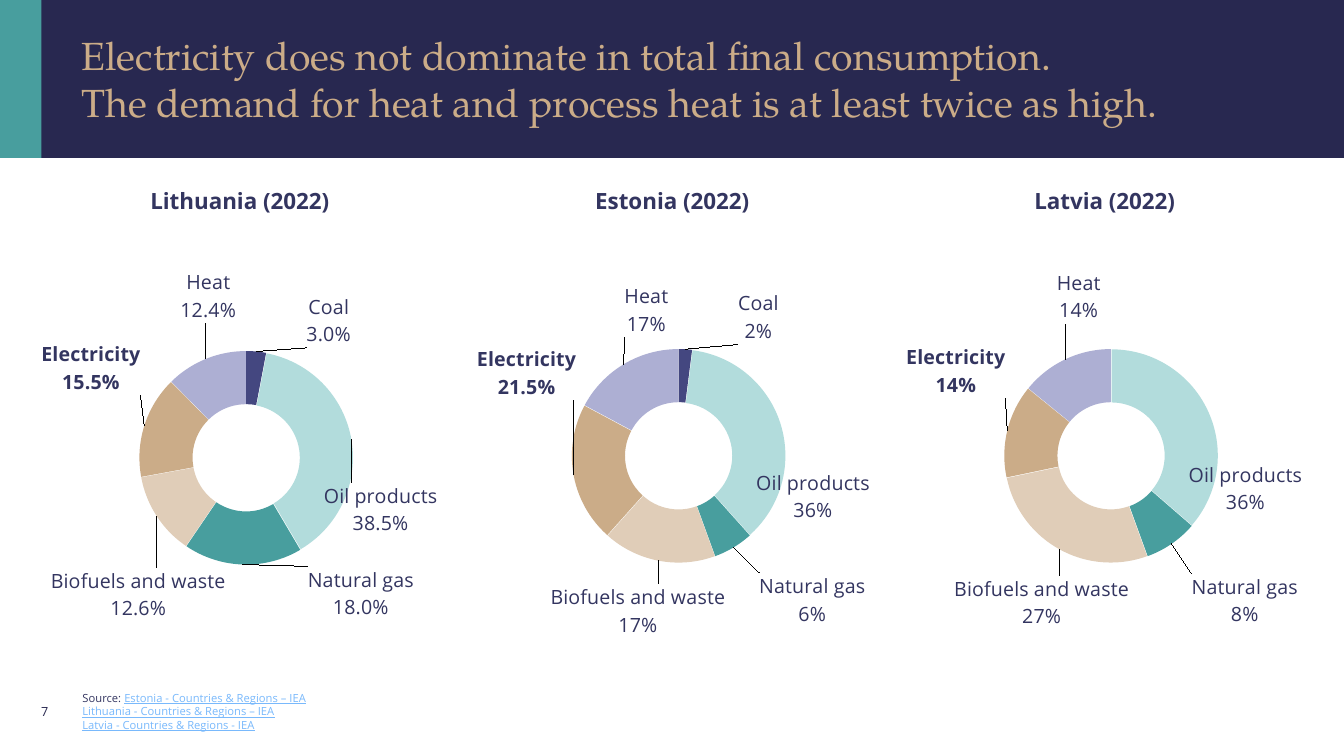
from dataclasses import dataclass
from math import cos, pi, sin

from pptx import Presentation
from pptx import util as u
from pptx.chart.data import CategoryChartData
from pptx.dml.color import RGBColor
from pptx.enum import chart as charts, shapes, text
from pptx.oxml import parse_xml
from pptx.oxml.ns import nsdecls, qn

SANS, SERIF = "Open Sans", "TeX Gyre Pagella"
NAVY, INK, TEAL, GOLD, LINK = "282850", "333560", "489E9E", "CBAC88", "79B9FC"
WIDE, HIGH, BAND = 960, 540, 113
RING_W, RING_H = 283.7, 300.2
PLOT_X, PLOT_Y, PLOT_W, PLOT_H = 0.247, 0.135, 0.538, 0.729
RADIUS = PLOT_W * RING_W / 2
FUELS = {
    "Coal": "444780",
    "Oil products": "B2DCDC",
    "Natural gas": TEAL,
    "Biofuels and waste": "E0CDB8",
    "Electricity": GOLD,
    "Heat": "ADAFD3",
}
BOLD = "Electricity"


@dataclass
class Ring:
    """One country's doughnut; spots are label centres from the ring centre."""
    name: str
    left: float
    top: float
    vals: list[float]
    spots: list[tuple[float, float]]
    form: str = "0%"
    fixed: str = ""


RINGS = [
    Ring("Lithuania (2022)", 29.5, 177.1, [3, 38.5, 18, 12.6, 15.5, 12.4],
         [(59, -98), (96, 37), (82, 97), (-77, 97.5), (-111, -64), (-27, -115.5)],
         form="0.0%"),
    Ring("Estonia (2022)", 338.4, 175.7, [2, 36, 6, 17, 21, 17],
         [(57, -99), (96, 29), (95.5, 103), (-29, 111), (-108.5, -59), (-23, -104)],
         fixed="21.5%"),
    Ring("Latvia (2022)", 647.3, 175.7, [0, 36, 8, 27, 14, 14],
         [(54.5, -99), (96, 23.5), (95.5, 103.5), (-49.5, 105), (-111, -60.5),
          (-23, -113.5)]),
]
SOURCES = [
    "Estonia - Countries & Regions – IEA",
    "Lithuania - Countries & Regions – IEA",
    "Latvia - Countries & Regions - IEA",
]


def shade(hue: str) -> RGBColor:
    return RGBColor.from_string(hue)


def style(font, size: float, hue: str, face: str = SANS, bold: bool = False) -> None:
    font.size, font.name, font.bold = u.Pt(size), face, bold
    font.color.rgb = shade(hue)


def block(slide, left: float, top: float, width: float, height: float, hue: str) -> None:
    rect = slide.shapes.add_shape(
        shapes.MSO_SHAPE.RECTANGLE, u.Pt(left), u.Pt(top), u.Pt(width), u.Pt(height))
    rect.shadow.inherit = False
    rect.fill.solid()
    rect.fill.fore_color.rgb = shade(hue)
    rect.line.fill.background()


def label(slide, left: float, top: float, width: float, height: float,
          middle: bool = False):
    """Add a wrapping text box and return its first paragraph."""
    box = slide.shapes.add_textbox(u.Pt(left), u.Pt(top), u.Pt(width), u.Pt(height))
    frame = box.text_frame
    frame.word_wrap = True
    if middle:
        frame.vertical_anchor = text.MSO_ANCHOR.MIDDLE
    return frame.paragraphs[0]


def layout(x: float, y: float, more: str = "") -> str:
    return (f'<c:layout {nsdecls("c")}><c:manualLayout>{more}'
            f'<c:x val="{x:.4f}"/><c:y val="{y:.4f}"/></c:manualLayout></c:layout>')


def looks(bold: bool) -> str:
    return (f'<a:pPr><a:defRPr sz="1400" b="{int(bold)}"><a:solidFill>'
            f'<a:srgbClr val="{INK}"/></a:solidFill><a:latin typeface="{SANS}"/>'
            '</a:defRPr></a:pPr>')


def body(bold: bool) -> str:
    return (f'<c:txPr><a:bodyPr wrap="none"/><a:lstStyle/><a:p>{looks(bold)}'
            '<a:endParaRPr lang="en-US"/></a:p></c:txPr>')


def rich(lines: list[str]) -> str:
    """Fixed bold label wording, one paragraph a line."""
    run = looks(True).replace("<a:pPr>", "").replace("</a:pPr>", "")
    run = run.replace("a:defRPr", "a:rPr")
    paras = "".join(f"<a:p>{looks(True)}<a:r>{run}<a:t>{line}</a:t></a:r></a:p>"
                    for line in lines)
    return f'<c:tx><c:rich><a:bodyPr wrap="none"/><a:lstStyle/>{paras}</c:rich></c:tx>'


def tags(ring: Ring) -> str:
    """Data labels, each moved from the middle of its slice to its spot."""
    form = f'<c:numFmt formatCode="{ring.form}" sourceLinked="0"/>'
    flags = ('<c:showLegendKey val="0"/><c:showVal val="0"/><c:showCatName val="1"/>'
             '<c:showSerName val="0"/><c:showPercent val="1"/>'
             '<c:showBubbleSize val="0"/><c:separator>\n</c:separator>')
    total, done, parts = sum(ring.vals), 0.0, []
    for i, (fuel, val, (dx, dy)) in enumerate(zip(FUELS, ring.vals, ring.spots)):
        turn = 2 * pi * (done + val / 2) / total
        done += val
        x = (dx - 0.75 * RADIUS * sin(turn)) / RING_W
        y = (dy + 0.75 * RADIUS * cos(turn)) / RING_H
        bold = fuel == BOLD
        words = rich([fuel, ring.fixed]) if bold and ring.fixed else ""
        parts.append(f'<c:dLbl><c:idx val="{i}"/>{layout(x, y)}{words}{form}'
                     f'{body(bold)}{flags}</c:dLbl>')
    return (f'<c:dLbls {nsdecls("c", "a")}>{"".join(parts)}{form}{body(False)}{flags}'
            '<c:showLeaderLines val="1"/></c:dLbls>')


def draw(slide, ring: Ring) -> None:
    head = label(slide, ring.left, 130.3, RING_W, 36)
    head.text = ring.name
    head.alignment = text.PP_ALIGN.CENTER
    style(head.font, 16, INK, bold=True)

    data = CategoryChartData()
    data.categories = list(FUELS)
    data.add_series("Series 1", ring.vals)
    chart = slide.shapes.add_chart(
        charts.XL_CHART_TYPE.DOUGHNUT, u.Pt(ring.left), u.Pt(ring.top),
        u.Pt(RING_W), u.Pt(RING_H), data).chart
    chart.has_legend = chart.has_title = False
    style(chart.font, 9, GOLD, bold=True)
    series = chart.plots[0].series[0]
    for i, hue in enumerate(FUELS.values()):
        part = series.points[i].format
        part.fill.solid()
        part.fill.fore_color.rgb = shade(hue)
        part.line.fill.background()

    ser = series._element
    ser.find(qn("c:dPt")).addprevious(
        parse_xml(f'<c:explosion {nsdecls("c")} val="1"/>'))
    ser.find(qn("c:cat")).addprevious(parse_xml(tags(ring)))
    area = chart._chartSpace.chart.plotArea
    for old in area.findall(qn("c:layout")):
        area.remove(old)
    frame = layout(PLOT_X, PLOT_Y, '<c:layoutTarget val="inner"/>'
                   '<c:xMode val="edge"/><c:yMode val="edge"/>')
    size = f'<c:w val="{PLOT_W}"/><c:h val="{PLOT_H}"/></c:manualLayout>'
    area.insert(0, parse_xml(frame.replace("</c:manualLayout>", size)))


def main() -> None:
    deck = Presentation()
    deck.slide_width, deck.slide_height = u.Pt(WIDE), u.Pt(HIGH)
    slide = deck.slides.add_slide(deck.slide_layouts[5])
    slide.background.fill.solid()
    slide.background.fill.fore_color.rgb = shade(NAVY)
    block(slide, 0, 0, 29.5, BAND, TEAL)
    block(slide, 0, BAND, WIDE, HIGH - BAND, "FFFFFF")

    title = slide.shapes.title
    title.left, title.top = u.Pt(51.1), u.Pt(14.4)
    title.width, title.height = u.Pt(859.7), u.Pt(82.8)
    frame = title.text_frame
    frame.text = ("Electricity does not dominate in total final consumption.\v"
                  "The demand for heat and process heat is at least twice as high.")
    frame.auto_size = text.MSO_AUTO_SIZE.NONE
    frame.vertical_anchor = text.MSO_ANCHOR.MIDDLE
    frame.paragraphs[0].alignment = text.PP_ALIGN.LEFT
    style(frame.paragraphs[0].font, 28, GOLD, SERIF)

    for ring in RINGS:
        draw(slide, ring)

    page = label(slide, 22.3, 493.9, 38.2, 28.8, middle=True)
    page.text = "7"
    style(page.font, 9, NAVY)

    note = label(slide, 51.8, 499.7, 308.2, 16.6, middle=True)
    lead = note.add_run()
    lead.text = "Source: "
    style(lead.font, 8, INK)
    for i, name in enumerate(SOURCES):
        if i:
            note.add_line_break()
        run = note.add_run()
        run.text = name
        style(run.font, 8, LINK)
        run.font.underline = True

    deck.save("out.pptx")


if __name__ == "__main__":
    main()
